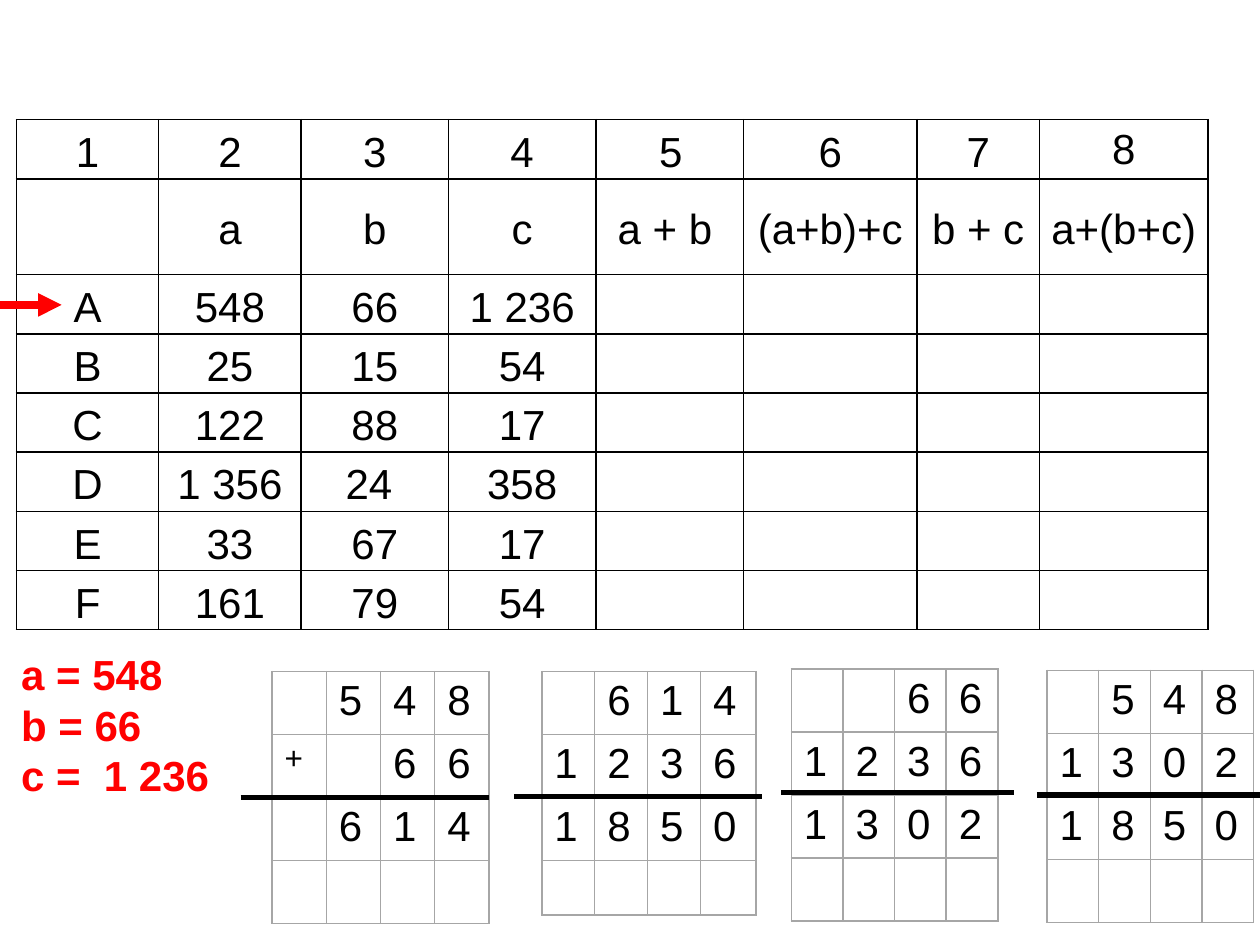
from lxml.etree import SubElement
from pptx import Presentation
from pptx.dml.color import RGBColor
from pptx.enum.shapes import MSO_CONNECTOR
from pptx.enum.text import MSO_ANCHOR, MSO_AUTO_SIZE, PP_ALIGN
from pptx.oxml import parse_xml
from pptx.oxml.ns import nsdecls, qn
from pptx.util import Inches, Pt

VALUES = [
    ["1", "2", "3", "4", "5", "6", "7", "8"],
    ["", "a", "b", "c", "a + b ", "(a+b)+c", "b + c", "a+(b+c)"],
    ["A", "548", "66", "1 236"],
    ["B", "25", "15", "54"],
    ["C", "122", "88", "17"],
    ["D", "1 356", "24 ", "358"],
    ["E", "33", "67", "17"],
    ["F", "161", "79", "54"],
]
VALUE_COLS = [1.13, 1.13, 1.17, 1.17, 1.17, 1.38, 0.97, 1.34]
VALUE_ROWS = [0.47, 0.76] + [0.47] * 6
SUM_ROWS = [0.5] * 4
SUMS = [
    (2.16, 5.33, [0.43] * 4, SUM_ROWS, [" 548", "+ 66", " 614", ""], (1.91, 3.88, 6.33)),
    (4.3, 5.33, [0.42] * 3 + [0.44], [0.5] * 3 + [0.43], [" 614", "1236", "1850", ""], (4.08, 6.05, 6.32)),
    (6.28, 5.31, [0.41] * 4, SUM_ROWS, ["  66", "1236", "1302", ""], (6.2, 8.05, 6.29)),
    (8.31, 5.32, [0.41] * 4, SUM_ROWS, [" 548", "1302", "1850", ""], (8.23, 10.08, 6.31)),
]


def rgb(value):
    return RGBColor.from_string(value)


class Deck:
    """Holds the style and the current slide, and draws each kind of element."""

    font, size = "Arial", 24
    ink, red, gray = "000000", "FF0000", "A6A6A6"

    def __init__(self, width, height):
        self.prs = Presentation()
        self.prs.slide_width, self.prs.slide_height = Inches(width), Inches(height)
        self.s = self.prs.slides.add_slide(self.prs.slide_layouts[6])

    def style(self, p, color, size=None, bold=False):
        f = p.font
        f.name, f.size, f.bold = self.font, Pt(size or self.size), bold
        f.color.rgb = rgb(color)

    def border(self, cell, color):
        tc_pr = cell._tc.get_or_add_tcPr()
        for i, side in enumerate("LRTB"):
            tc_pr.insert(i, parse_xml(
                f'<a:ln{side} {nsdecls("a")} w="12700"><a:solidFill>'
                f'<a:srgbClr val="{color}"/></a:solidFill></a:ln{side}>'))

    def table(self, x, y, cols, rows, values, color):
        frame = self.s.shapes.add_table(
            len(rows), len(cols), Inches(x), Inches(y), Inches(sum(cols)), Inches(sum(rows)))
        tbl = frame.table
        tbl.first_row = tbl.horz_banding = False
        for col, width in zip(tbl.columns, cols):
            col.width = Inches(width)
        for row, height, texts in zip(tbl.rows, rows, values):
            row.height = Inches(height)
            for cell in row.cells:
                cell.fill.background()
                self.border(cell, color)
            for cell, text in zip(row.cells, texts):
                if text.strip():
                    cell.text = text
                    self.style(cell.text_frame.paragraphs[0], self.ink, 18 if text == "+" else None)
        return tbl

    def value_table(self, x, y):
        tbl = self.table(x, y, VALUE_COLS, VALUE_ROWS, VALUES, self.ink)
        for cell in tbl.iter_cells():
            cell.margin_left = cell.margin_right = Inches(0.07)
            cell.margin_top = cell.margin_bottom = 0
            cell.vertical_anchor = MSO_ANCHOR.MIDDLE
            p = cell.text_frame.paragraphs[0]
            p.alignment, p.line_spacing = PP_ALIGN.CENTER, 1.15
        tbl.cell(0, 7).vertical_anchor = MSO_ANCHOR.TOP
        for r in range(2):
            p_pr = tbl.cell(r, 4).text_frame.paragraphs[0]._p.get_or_add_pPr()
            p_pr.set("marL", str(Inches(0.25)))
            p_pr.set("indent", str(Inches(-0.23)))

    def line(self, x1, x2, y, color, width, arrow=False):
        c = self.s.shapes.add_connector(
            MSO_CONNECTOR.STRAIGHT, Inches(x1), Inches(y), Inches(x2), Inches(y))
        c.line.color.rgb, c.line.width = rgb(color), Pt(width)
        if arrow:
            SubElement(c.line._get_or_add_ln(), qn("a:tailEnd"), type="triangle")
        SubElement(c._element.spPr, qn("a:effectLst"))

    def text(self, x, y, w, h, lines, color):
        tf = self.s.shapes.add_textbox(Inches(x), Inches(y), Inches(w), Inches(h)).text_frame
        tf.word_wrap, tf.auto_size = True, MSO_AUTO_SIZE.SHAPE_TO_FIT_TEXT
        tf.text = "\n".join(lines)
        for p in tf.paragraphs:
            self.style(p, color, bold=True)


def main():
    deck = Deck(10, 7.5)
    deck.value_table(0.13, 0.95)
    deck.line(-0.49, 0.49, 2.42, deck.red, 4.5, arrow=True)
    deck.text(0.07, 5.1, 1.84, 1.72, ["a = 548", "b = 66", "c =  1 236"], deck.red)
    for x, y, cols, rows, digits, (x1, x2, rule_y) in SUMS:
        deck.table(x, y, cols, rows, digits, deck.gray)
        deck.line(x1, x2, rule_y, deck.ink, 3)
    deck.prs.save("out.pptx")


if __name__ == "__main__":
    main()
